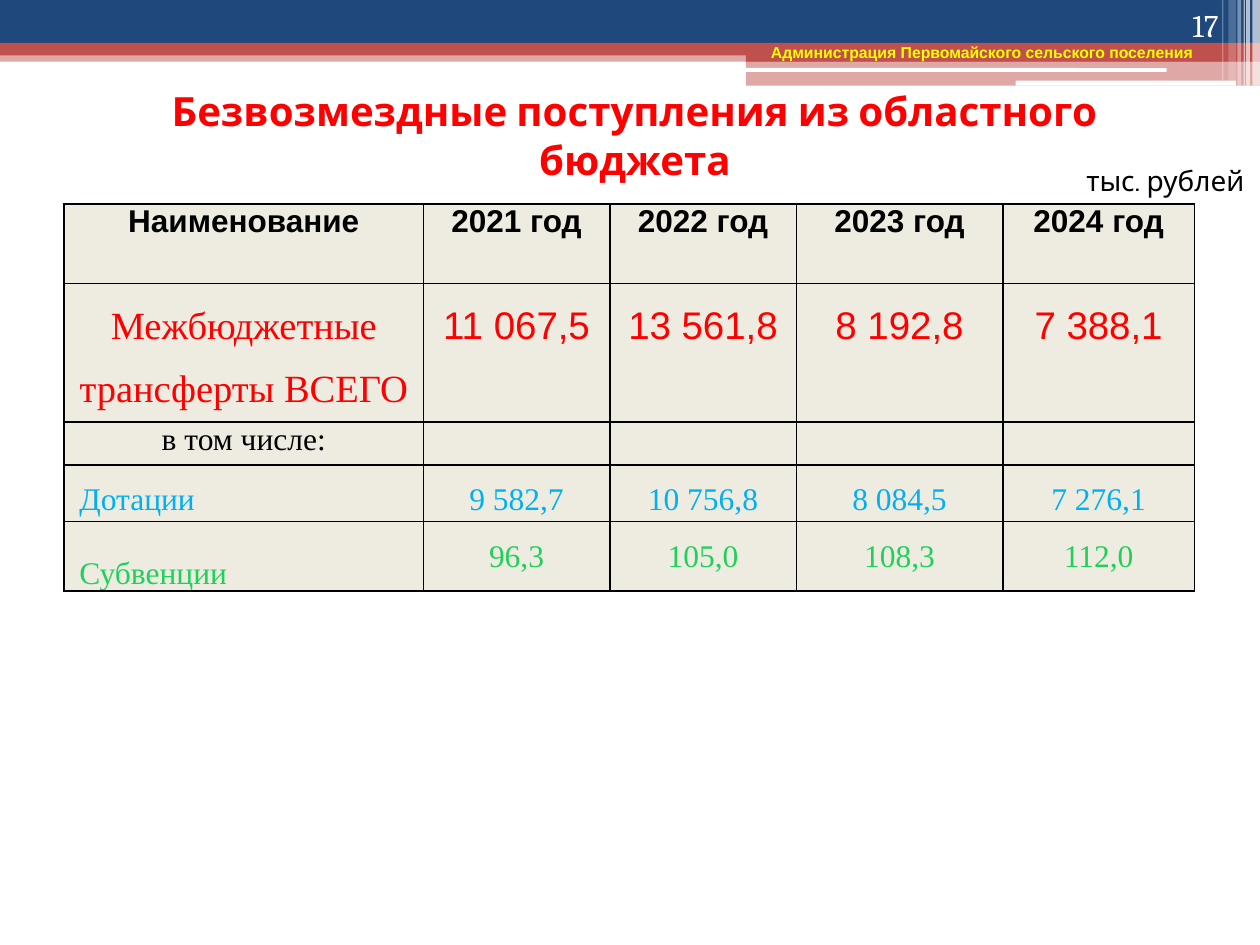
from dataclasses import dataclass

from lxml import etree
from pptx import Presentation
from pptx.dml.color import RGBColor
from pptx.enum.shapes import MSO_SHAPE
from pptx.enum.text import MSO_ANCHOR, PP_ALIGN
from pptx.oxml.ns import qn
from pptx.util import Inches, Pt

RECT, ROUND = MSO_SHAPE.RECTANGLE, MSO_SHAPE.ROUNDED_RECTANGLE
LEFT, CENTER, RIGHT = PP_ALIGN.LEFT, PP_ALIGN.CENTER, PP_ALIGN.RIGHT
TOP, MIDDLE, BOTTOM = MSO_ANCHOR.TOP, MSO_ANCHOR.MIDDLE, MSO_ANCHOR.BOTTOM


@dataclass(frozen=True)
class Theme:
    navy: str = "1F497D"
    brick: str = "C0504D"
    white: str = "FFFFFF"
    black: str = "000000"
    red: str = "FF0000"
    yellow: str = "FFFF00"
    sand: str = "EEECE1"
    blue: str = "00B0F0"
    green: str = "1FD15A"
    sans: str = "Arial"
    serif: str = "Times New Roman"
    display: str = "Cabin"
    number: str = "Cambria"
    title: int = 23
    total: int = 22
    body: int = 18
    unit: int = 16
    small: int = 9


T = Theme()


def write(tf, text, size=T.body, font=T.sans, color=T.black, bold=False,
          align=CENTER, spacing=None, indent=0):
    p = tf.paragraphs[0]
    p.alignment = align
    if spacing:
        p.line_spacing = spacing
    if indent:
        pPr = p._p.get_or_add_pPr()
        pPr.set("marL", str(Inches(indent)))
        pPr.set("indent", "0")
    r = p.add_run()
    r.text = text
    r.font.size = Pt(size)
    r.font.name = font
    r.font.bold = bold
    r.font.color.rgb = RGBColor.from_string(color)


def add_label(s, box, text, anchor=TOP, **fmt):
    tf = s.shapes.add_textbox(*map(Inches, box)).text_frame
    tf.word_wrap = True
    tf.vertical_anchor = anchor
    write(tf, text, **fmt)


def add_bar(s, box, color, alpha=100, kind=RECT):
    sp = s.shapes.add_shape(kind, *map(Inches, box))
    sp.shadow.inherit = False
    sp.line.fill.background()
    sp.fill.solid()
    sp.fill.fore_color.rgb = RGBColor.from_string(color)
    if alpha < 100:
        clr = next(sp._element.spPr.iter(qn("a:srgbClr")))
        etree.SubElement(clr, qn("a:alpha")).set("val", str(alpha * 1000))


def add_banner(s, box):
    x, y, w, h = box
    tab_x, tab_w = x + 5.92, w - 5.92
    add_bar(s, (x, y + 0.4, w, 0.09), T.brick, 50)
    add_bar(s, (x, y, w, 0.34), T.navy)
    add_bar(s, (x, y + 0.34, w, 0.1), T.brick)
    add_bar(s, (tab_x, y + 0.39, tab_w, 0.1), T.brick)
    add_bar(s, (tab_x, y + 0.48, tab_w, 0.2), T.brick, 50)
    add_bar(s, (x + 5.91, y + 0.54, 3.35, 0.03), T.white, kind=ROUND)
    add_bar(s, (x + 8.06, y + 0.64, 1.75, 0.04), T.white, kind=ROUND)
    stripes = [(9.94, 0.06, h, 65), (9.89, 0.03, h, 65), (9.87, 0.01, h, 60),
               (9.82, 0.03, h, 40), (9.75, 0.06, 0.64, 20), (9.7, 0.01, 0.64, 30)]
    for left, width, height, alpha in stripes:
        add_bar(s, (x + left, y, width, height), T.white, alpha)


def style_cell(cell):
    cell.margin_left = cell.margin_right = cell.margin_top = cell.margin_bottom = 0
    tcPr = cell._tc.get_or_add_tcPr()
    for side in ("lnL", "lnR", "lnT", "lnB"):
        ln = etree.SubElement(tcPr, qn(f"a:{side}"), w=str(Pt(1)))
        fill = etree.SubElement(ln, qn("a:solidFill"))
        etree.SubElement(fill, qn("a:srgbClr"), val=T.black)
    cell.fill.solid()
    cell.fill.fore_color.rgb = RGBColor.from_string(T.sand)


def add_transfers_table(s, box):
    head = dict(bold=True)
    total = dict(size=T.total, color=T.red, spacing=1.5)
    grants = dict(font=T.serif, color=T.blue, spacing=1.5)
    subsidies = dict(font=T.serif, color=T.green)
    named = dict(align=LEFT, indent=0.12)
    rows = [
        (0.63, ["Наименование", "2021 год", "2022 год", "2023 год", "2024 год"],
         head, head),
        (1.02, ["Межбюджетные трансферты ВСЕГО", "11 067,5", "13 561,8", "8 192,8", "7 388,1"],
         total | dict(font=T.serif), total),
        (0.34, ["в том числе:", "", "", "", ""], dict(font=T.serif), {}),
        (0.41, ["Дотации", "9 582,7", "10 756,8", "8 084,5", "7 276,1"],
         grants | named, grants),
        (0.55, ["Субвенции", "96,3", "105,0", "108,3", "112,0"],
         subsidies | named, subsidies | dict(spacing=1.5)),
    ]
    widths = [2.85, 1.48, 1.48, 1.64, 1.52]
    table = s.shapes.add_table(len(rows), len(widths), *map(Inches, box)).table
    table.first_row = table.horz_banding = False
    for col, width in zip(table.columns, widths):
        col.width = Inches(width)
    for i, (height, texts, name_fmt, value_fmt) in enumerate(rows):
        table.rows[i].height = Inches(height)
        for j, text in enumerate(texts):
            cell = table.cell(i, j)
            style_cell(cell)
            if text:
                write(cell.text_frame, text, **(value_fmt if j else name_fmt))
    table.cell(len(rows) - 1, 0).vertical_anchor = BOTTOM


def main():
    prs = Presentation()
    prs.slide_width, prs.slide_height = Inches(10), Inches(7.5)
    s = prs.slides.add_slide(prs.slide_layouts[6])
    add_banner(s, (0, 0, 10, 0.68))
    add_label(s, (0.43, 0.6, 9.13, 0.94), "Безвозмездные поступления из областного бюджета",
              MIDDLE, size=T.title, font=T.display, color=T.red, bold=True, indent=0.09)
    add_transfers_table(s, (0.51, 1.62, 8.97, 2.95))
    add_label(s, (6.02, 0.29, 3.55, 0.4), "Администрация Первомайского сельского поселения",
              size=T.small, color=T.yellow, bold=True, align=LEFT)
    add_label(s, (8.5, 1.31, 1.5, 0.24), "тыс. рублей", MIDDLE, size=T.unit, font=T.display)
    add_label(s, (8.94, 0, 0.83, 0.4), "17", BOTTOM, font=T.number, color=T.white, align=RIGHT)
    prs.save("out.pptx")


if __name__ == "__main__":
    main()
